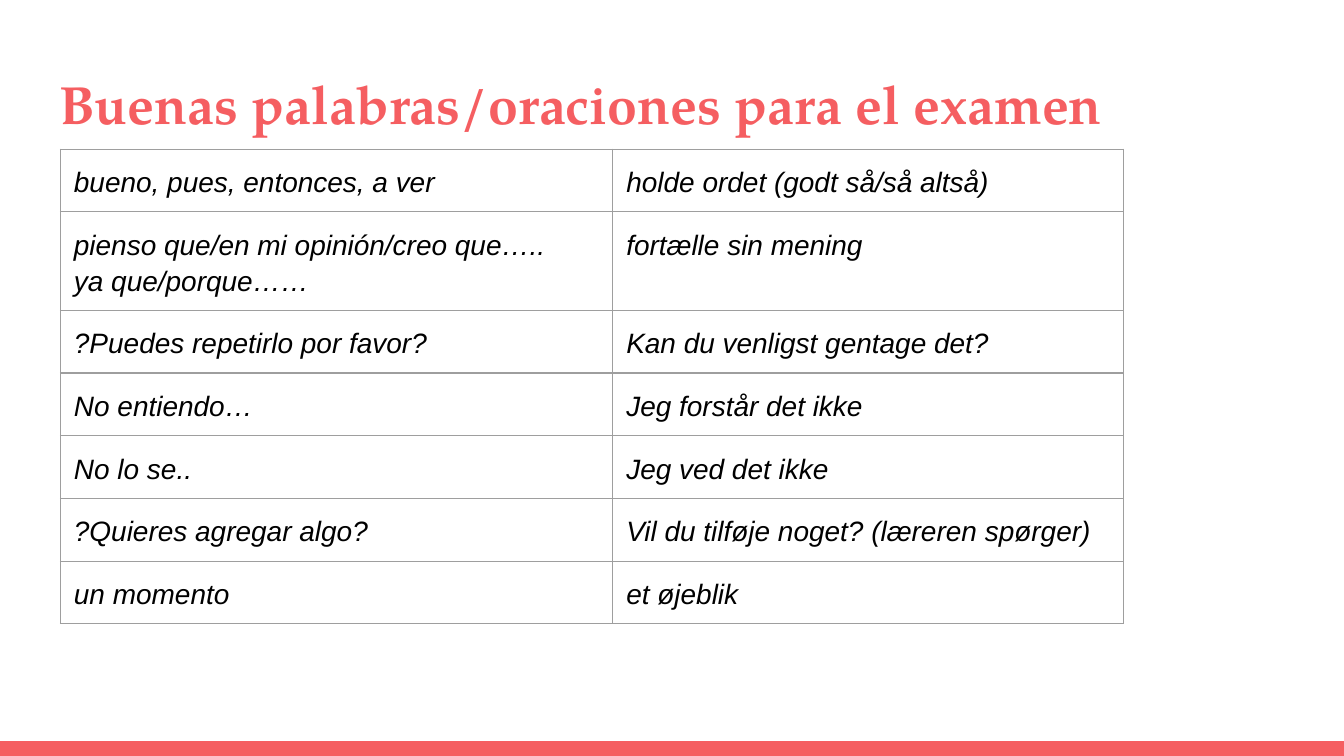
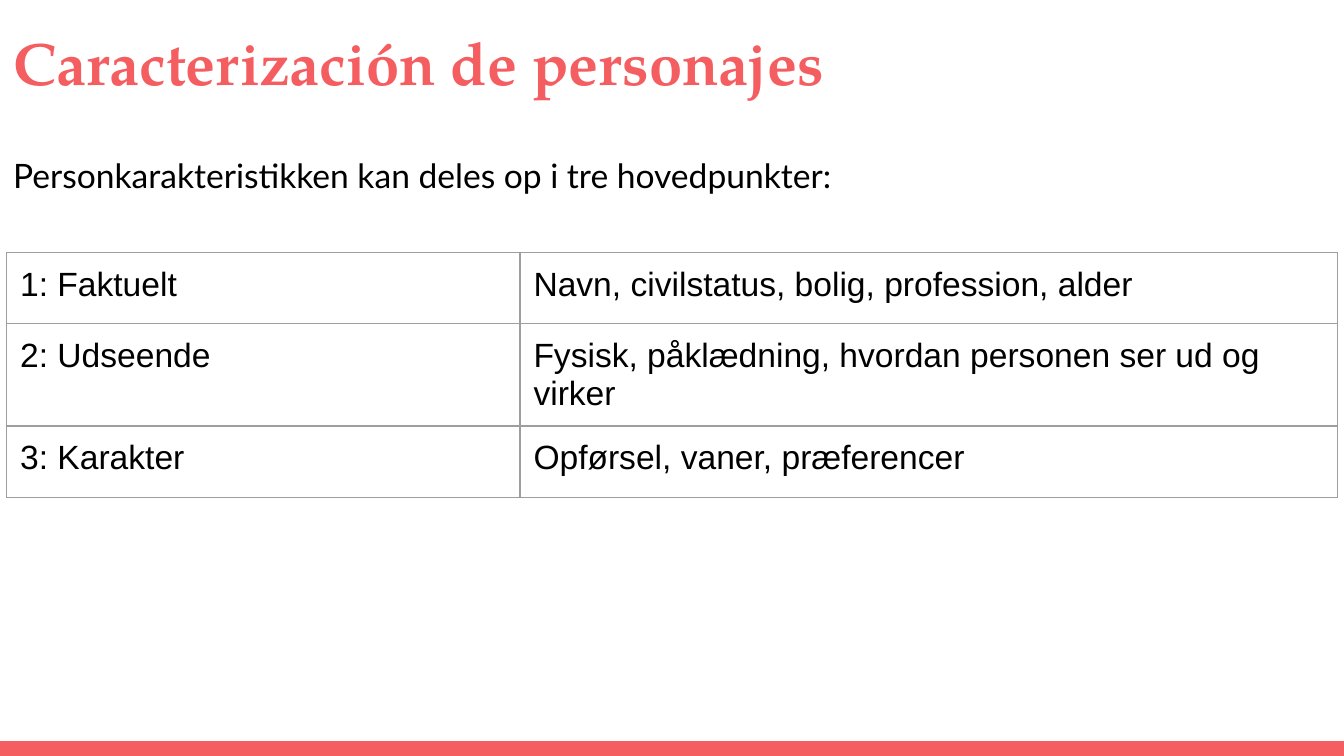
from pptx import Presentation
from pptx.dml.color import RGBColor
from pptx.enum.shapes import MSO_SHAPE
from pptx.enum.text import MSO_ANCHOR, MSO_AUTO_SIZE, PP_ALIGN
from pptx.oxml import parse_xml
from pptx.oxml.ns import nsdecls, qn
from pptx.util import Inches, Pt

# Shared look
CORAL = RGBColor(0xF5, 0x5E, 0x61)
BLACK = RGBColor(0x00, 0x00, 0x00)
GREY = RGBColor(0x9E, 0x9E, 0x9E)
RECTANGLE = MSO_SHAPE.RECTANGLE
TOP = MSO_ANCHOR.TOP
NO_FIT = MSO_AUTO_SIZE.NONE
LEFT = PP_ALIGN.LEFT
TITLE_ONLY = 5
WIDTH = 10
HEIGHT = WIDTH * 9 / 16
BAND_HEIGHT = 0.11
INSET = 0.1
BORDER_WIDTH = Pt(0.75)
TITLE_FONT = {"name": "TeX Gyre Pagella", "bold": True}
PHRASE_FONT = {"name": "Arial", "size": Pt(15), "italic": True}
TRAIT_FONT = {"name": "Arial", "size": Pt(18)}
INTRO_FONT = {"name": "Lato", "size": Pt(18)}

PHRASES = [
    ("bueno, pues, entonces, a ver", "holde ordet (godt så/så altså)"),
    ("pienso que/en mi opinión/creo que…..\nya que/porque……", "fortælle sin mening"),
    ("?Puedes repetirlo por favor?", "Kan du venligst gentage det?"),
    ("No entiendo…", "Jeg forstår det ikke"),
    ("No lo se..", "Jeg ved det ikke"),
    ("?Quieres agregar algo?", "Vil du tilføje noget? (læreren spørger)"),
    ("un momento", "et øjeblik"),
]
TRAITS = [
    ("1: Faktuelt", "Navn, civilstatus, bolig, profession, alder"),
    ("2: Udseende", "Fysisk, påklædning, hvordan personen ser ud og virker"),
    ("3: Karakter", "Opførsel, vaner, præferencer"),
]


def set_insets(holder):
    for side in ("left", "right", "top", "bottom"):
        setattr(holder, f"margin_{side}", Inches(INSET))


def write(frame, text, font, color=BLACK, spacing=None):
    frame.text = text
    frame.word_wrap = True
    for para in frame.paragraphs:
        para.alignment = LEFT
        if spacing:
            para.line_spacing = spacing
        for span in para.runs:
            for name, value in font.items():
                setattr(span.font, name, value)
            span.font.color.rgb = color


def prepare_frame(shape):
    frame = shape.text_frame
    set_insets(frame)
    frame.auto_size = NO_FIT
    frame.vertical_anchor = TOP
    return frame


def add_band(deck, page):
    """Draw the footer band and hand it to the master, so every slide shows it."""
    band = page.shapes.add_shape(
        RECTANGLE, 0, Inches(HEIGHT - BAND_HEIGHT), Inches(WIDTH), Inches(BAND_HEIGHT))
    band.shadow.inherit = False
    band.fill.solid()
    band.fill.fore_color.rgb = CORAL
    band.line.fill.background()
    deck.slide_master.element.cSld.spTree.append(band.element)


def add_title(page, box, text, size):
    title = page.shapes.title
    title.left, title.top, title.width, title.height = map(Inches, box)
    write(prepare_frame(title), text, {**TITLE_FONT, "size": Pt(size)}, CORAL)


def add_intro(page, box, text):
    intro = page.shapes.add_textbox(*map(Inches, box))
    write(prepare_frame(intro), text, INTRO_FONT, spacing=1.15)


def add_borders(frame):
    for properties in frame.element.iter(qn("a:tcPr")):
        for index, side in enumerate(("lnL", "lnR", "lnT", "lnB")):
            properties.insert(index, parse_xml(
                f'<a:{side} {nsdecls("a")} w="{BORDER_WIDTH}"><a:solidFill>'
                f'<a:srgbClr val="{GREY}"/></a:solidFill></a:{side}>'))


def add_grid(page, left, top, widths, heights, rows, font, spacing=None):
    frame = page.shapes.add_table(
        len(rows), len(widths), Inches(left), Inches(top),
        Inches(sum(widths)), Inches(sum(heights)))
    table = frame.table
    table.first_row = table.horz_banding = False
    for column, width in zip(table.columns, widths):
        column.width = Inches(width)
    for row, height, texts in zip(table.rows, heights, rows):
        row.height = Inches(height)
        for cell, text in zip(row.cells, texts):
            set_insets(cell)
            cell.vertical_anchor = TOP
            cell.fill.background()
            write(cell.text_frame, text, font, spacing=spacing)
    add_borders(frame)


def build_phrases(page):
    add_title(page, (0.34, 0.43, 9.32, 0.68), "Buenas palabras/oraciones para el examen", 28.8)
    add_grid(page, 0.45, 1.11, (4.11, 3.8), [0.42] * len(PHRASES), PHRASES, PHRASE_FONT, 1.15)


def build_traits(page):
    add_title(page, (0, 0.09, 9.32, 0.77), "Caracterización de personajes", 32)
    add_intro(page, (0, 1.01, 9.32, 3.61), "Personkarakteristikken kan deles op i tre hovedpunkter:")
    add_grid(page, 0.05, 1.88, (3.82, 6.08), (0.53, 0.7, 0.53), TRAITS, TRAIT_FONT)


def main():
    deck = Presentation()
    deck.slide_width, deck.slide_height = Inches(WIDTH), Inches(HEIGHT)
    layout = deck.slide_layouts[TITLE_ONLY]
    for build in (build_phrases, build_traits):
        build(deck.slides.add_slide(layout))
    add_band(deck, deck.slides[0])
    deck.save("out.pptx")


if __name__ == "__main__":
    main()
